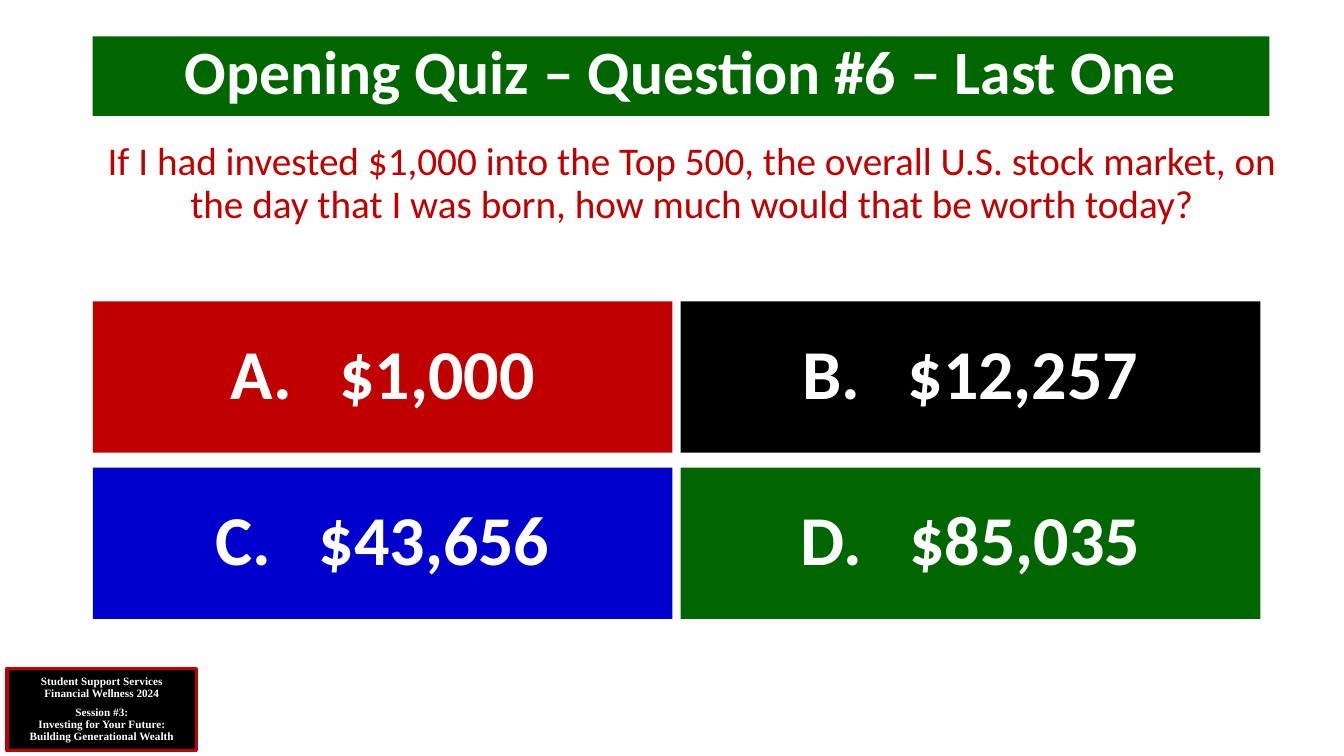
from dataclasses import dataclass

from pptx import Presentation
from pptx.dml.color import RGBColor
from pptx.enum.shapes import MSO_SHAPE
from pptx.enum.text import MSO_ANCHOR, PP_ALIGN
from pptx.util import Inches, Pt


@dataclass(frozen=True)
class Theme:
    white: str = "FFFFFF"
    black: str = "000000"
    red: str = "C00000"
    green: str = "006600"
    blue: str = "0000CC"
    main_font: str = "Calibri"
    badge_font: str = "Times New Roman"
    title_size: int = 44
    question_size: int = 28
    answer_size: int = 50
    badge_size: int = 8
    border_width: float = 2.25
    line_spacing: float = 0.9
    answer_tracking: float = 22.6


THEME = Theme()


def add_panel(slide, box, color, anchor):
    panel = slide.shapes.add_shape(MSO_SHAPE.RECTANGLE, *map(Inches, box))
    panel.shadow.inherit = False
    panel.fill.solid()
    panel.fill.fore_color.rgb = RGBColor.from_string(color)
    panel.line.fill.background()
    panel.text_frame.word_wrap = True
    panel.text_frame.vertical_anchor = anchor
    return panel


def center(paragraph):
    paragraph.alignment = PP_ALIGN.CENTER
    paragraph.line_spacing = THEME.line_spacing


def add_run(paragraph, text, size, color=THEME.white, bold=True, font=THEME.main_font):
    run = paragraph.add_run()
    run.text = text
    run.font.name = font
    run.font.size = Pt(size)
    run.font.bold = bold
    run.font.color.rgb = RGBColor.from_string(color)
    return run


def add_title(slide, box, text):
    banner = add_panel(slide, box, THEME.green, MSO_ANCHOR.TOP)
    heading = banner.text_frame.paragraphs[0]
    center(heading)
    add_run(heading, text, THEME.title_size)


def add_question(slide, box, text):
    question = slide.shapes.add_textbox(*map(Inches, box)).text_frame
    question.word_wrap = True
    wording = question.paragraphs[0]
    center(wording)
    add_run(wording, text, THEME.question_size, THEME.red, bold=False)


def add_answer(slide, box, letter, amount, color):
    tile = add_panel(slide, box, color, MSO_ANCHOR.MIDDLE)
    answer = tile.text_frame.paragraphs[0]
    center(answer)
    add_run(answer, letter, THEME.answer_size)
    gap = add_run(answer, " ", THEME.answer_size)
    gap._r.get_or_add_rPr().set("spc", str(round(THEME.answer_tracking * 100)))
    add_run(answer, amount, THEME.answer_size)


def add_answers(slide, box, answers, columns=2, gap_x=0.08, gap_y=0.15):
    left, top, width, height = box
    rows = len(answers) // columns
    tile_width = (width - gap_x * (columns - 1)) / columns
    tile_height = (height - gap_y * (rows - 1)) / rows
    for index, (letter, amount, color) in enumerate(answers):
        row, column = divmod(index, columns)
        tile_box = (
            left + column * (tile_width + gap_x),
            top + row * (tile_height + gap_y),
            tile_width,
            tile_height,
        )
        add_answer(slide, tile_box, letter, amount, color)


def add_session_badge(slide, box, groups):
    badge = add_panel(slide, box, THEME.black, MSO_ANCHOR.MIDDLE)
    badge.line.color.rgb = RGBColor.from_string(THEME.red)
    badge.line.width = Pt(THEME.border_width)
    for group_index, lines in enumerate(groups):
        if group_index == 0:
            paragraph = badge.text_frame.paragraphs[0]
        else:
            paragraph = badge.text_frame.add_paragraph()
            paragraph.space_before = Pt(5)
        center(paragraph)
        for line_index, line in enumerate(lines):
            if line_index:
                paragraph.add_line_break()
            add_run(paragraph, line, THEME.badge_size, font=THEME.badge_font)


def build_quiz_slide(presentation):
    slide = presentation.slides.add_slide(presentation.slide_layouts[6])
    add_session_badge(slide, (0.07, 6.63, 1.88, 0.82), [
        ["Student Support Services", "Financial Wellness 2024"],
        ["Session #3:", "Investing for Your Future:", "Building Generational Wealth"],
    ])
    add_title(slide, (0.92, 0.36, 11.67, 0.79), "Opening Quiz – Question #6 – Last One")
    add_question(
        slide,
        (0.92, 1.36, 11.88, 5.4),
        "If I had invested $1,000 into the Top 500, the overall U.S. stock market, "
        "on the day that I was born, how much would that be worth today?",
    )
    add_answers(slide, (0.92, 2.99, 11.58, 3.15), [
        ("A.", "$1,000", THEME.red),
        ("B.", "$12,257", THEME.black),
        ("C.", "$43,656", THEME.blue),
        ("D.", "$85,035", THEME.green),
    ])


def main():
    presentation = Presentation()
    presentation.slide_width = Inches(13.33)
    presentation.slide_height = Inches(7.5)
    build_quiz_slide(presentation)
    presentation.save("out.pptx")


if __name__ == "__main__":
    main()
